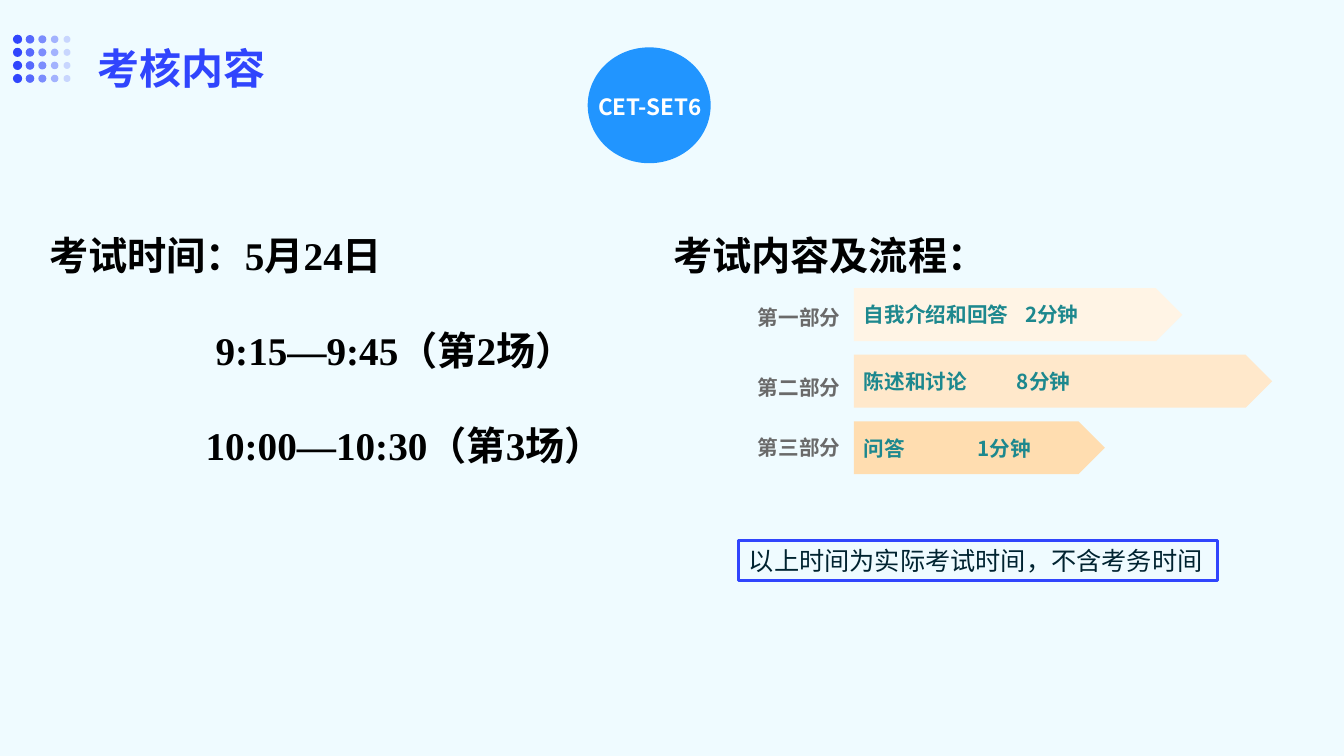
from lxml import etree
from pptx import Presentation
from pptx.dml.color import RGBColor
from pptx.enum.shapes import MSO_SHAPE
from pptx.enum.text import MSO_ANCHOR, PP_ALIGN
from pptx.oxml.ns import qn
from pptx.util import Inches, Pt

OVAL, PENTAGON, RECTANGLE = MSO_SHAPE.OVAL, MSO_SHAPE.PENTAGON, MSO_SHAPE.RECTANGLE
LEFT, CENTER = PP_ALIGN.LEFT, PP_ALIGN.CENTER
TOP, MIDDLE = MSO_ANCHOR.TOP, MSO_ANCHOR.MIDDLE
SANS, LATIN, SERIF = "Noto Sans CJK SC", "Calibri", "Times New Roman"
COLORS = {
    "background": "EFFBFF", "accent": "3045FD", "badge": "0085FF",
    "white": "FFFFFF", "black": "000000", "step": "1D888E",
    "part": "6A6A6A", "note": "002330",
    "cream": "FFF4E5", "peach": "FFE8CB", "apricot": "FFDDB0",
}


class ExamSlide:
    def __init__(self, deck):
        self.width, self.height = deck.slide_width, deck.slide_height
        self.slide = deck.slides.add_slide(deck.slide_layouts[6])
        background = self.slide.background.fill
        background.solid()
        background.fore_color.rgb = self.color("background")

    def color(self, name):
        return RGBColor.from_string(COLORS[name])

    def across(self, percent):
        return round(self.width * percent / 100)

    def down(self, percent):
        return round(self.height * percent / 100)

    def place(self, box):
        left, top, width, height = box
        return self.across(left), self.down(top), self.across(width), self.down(height)

    def shape(self, kind, box, fill=None, opacity=100, line=None):
        shape = self.slide.shapes.add_shape(kind, *self.place(box))
        shape.shadow.inherit = False
        if fill:
            shape.fill.solid()
            shape.fill.fore_color.rgb = self.color(fill)
            if opacity < 100:
                tint = shape.element.spPr.find(qn("a:solidFill"))[0]
                etree.SubElement(tint, qn("a:alpha"), val=str(opacity * 1000))
        else:
            shape.fill.background()
        if line:
            shape.line.color.rgb = self.color(line)
            shape.line.width = Pt(2)
        else:
            shape.line.fill.background()
        return shape.text_frame

    def dot(self, center_x, center_y, size, opacity):
        height = size * self.width / self.height
        box = (center_x - size / 2, center_y - height / 2, size, height)
        self.shape(OVAL, box, "accent", opacity)

    def text(self, box, words, size, color, **options):
        frame = self.slide.shapes.add_textbox(*self.place(box)).text_frame
        return self.letter(frame, words, size, color, **options)

    def letter(self, frame, words, size, color, font=SANS, bold=True,
               align=LEFT, anchor=TOP, wrap=True):
        frame.word_wrap = wrap
        frame.vertical_anchor = anchor
        frame.text = words
        for paragraph in frame.paragraphs:
            paragraph.alignment = align
            for run in paragraph.runs:
                self.style(run, size, color, font, bold)
        return frame

    def style(self, run, size, color, font, bold):
        run.font.size = Pt(size)
        run.font.bold = bold
        run.font.name = font
        run.font.color.rgb = self.color(color)
        if font == SANS:
            etree.SubElement(run._r.get_or_add_rPr(), qn("a:ea"), typeface=font)

    def indent(self, paragraph, percent):
        properties = paragraph._p.get_or_add_pPr()
        properties.set("marL", str(self.across(percent)))
        properties.set("indent", "0")

    def tab_stop(self, paragraph, percent):
        stops = etree.SubElement(paragraph._p.get_or_add_pPr(), qn("a:tabLst"))
        etree.SubElement(stops, qn("a:tab"), pos=str(self.across(percent)), algn="l")


def add_header(page):
    for row in range(4):
        for column in range(5):
            page.dot(1.31 + 0.92 * column, 5.2 + 1.73 * row,
                     0.68 - 0.04 * column, 100 - 20 * column)
    title = page.text((6.23, 1.07, 82.05, 12), "考核内容", 30, "accent")
    title.margin_left, title.margin_right = page.across(1.05), page.across(0.45)
    title.margin_top = title.margin_bottom = page.down(1.87)
    title.paragraphs[0].line_spacing = 1.4
    page.shape(OVAL, (43.73, 6.27, 9.15, 15.33), "badge", 86)
    page.text((43.2, 11.6, 10.28, 4.93), "CET-SET6", 16, "white", align=CENTER)


def add_schedule(page):
    lines = ["考试时间", "9:15—9:45（第2场）", "10:00—10:30（第3场）"]
    schedule = page.text((2.93, 30, 48.75, 16.93), "\n".join(lines), 28, "black", font=SERIF)
    heading, *sessions = schedule.paragraphs
    heading.runs[0].font.name = LATIN
    date = heading.add_run()
    date.text = "：5月24日"
    page.style(date, 28, "black", SERIF, True)
    for session, inset in zip(sessions, (12.38, 11.63)):
        session.space_before = Pt(34)
        page.indent(session, inset)


def add_process(page):
    page.text((49.35, 30, 23.7, 13.87), "考试内容及流程：", 28, "black", font=LATIN)
    steps = [
        ("第一部分", 39.73, "自我介绍和回答\t2分钟", 24.45, 12, "cream"),
        ("第二部分", 48.93, "陈述和讨论\t8分钟", 31.13, 11.4, "peach"),
        ("第三部分", 56.93, "问答\t1分钟", 18.68, 8.48, "apricot"),
    ]
    for row, (part, part_top, step, length, duration_at, fill) in enumerate(steps):
        arrow = page.shape(PENTAGON, (63.53, 38.13 + 8.8 * row, length, 7), fill)
        page.letter(arrow, step, 14.7, "step", anchor=MIDDLE)
        page.tab_stop(arrow.paragraphs[0], duration_at)
        page.text((55.65, part_top, 7.65, 4.67), part, 14.7, "part",
                  align=CENTER, wrap=False)
    note = page.shape(RECTANGLE, (54.98, 71.47, 35.63, 5.33), line="accent")
    page.letter(note, "以上时间为实际考试时间，不含考务时间", 18, "note",
                bold=False, wrap=False)


def main():
    deck = Presentation()
    deck.slide_width, deck.slide_height = Inches(13.33), Inches(7.5)
    page = ExamSlide(deck)
    add_header(page)
    add_schedule(page)
    add_process(page)
    deck.save("out.pptx")


if __name__ == "__main__":
    main()
